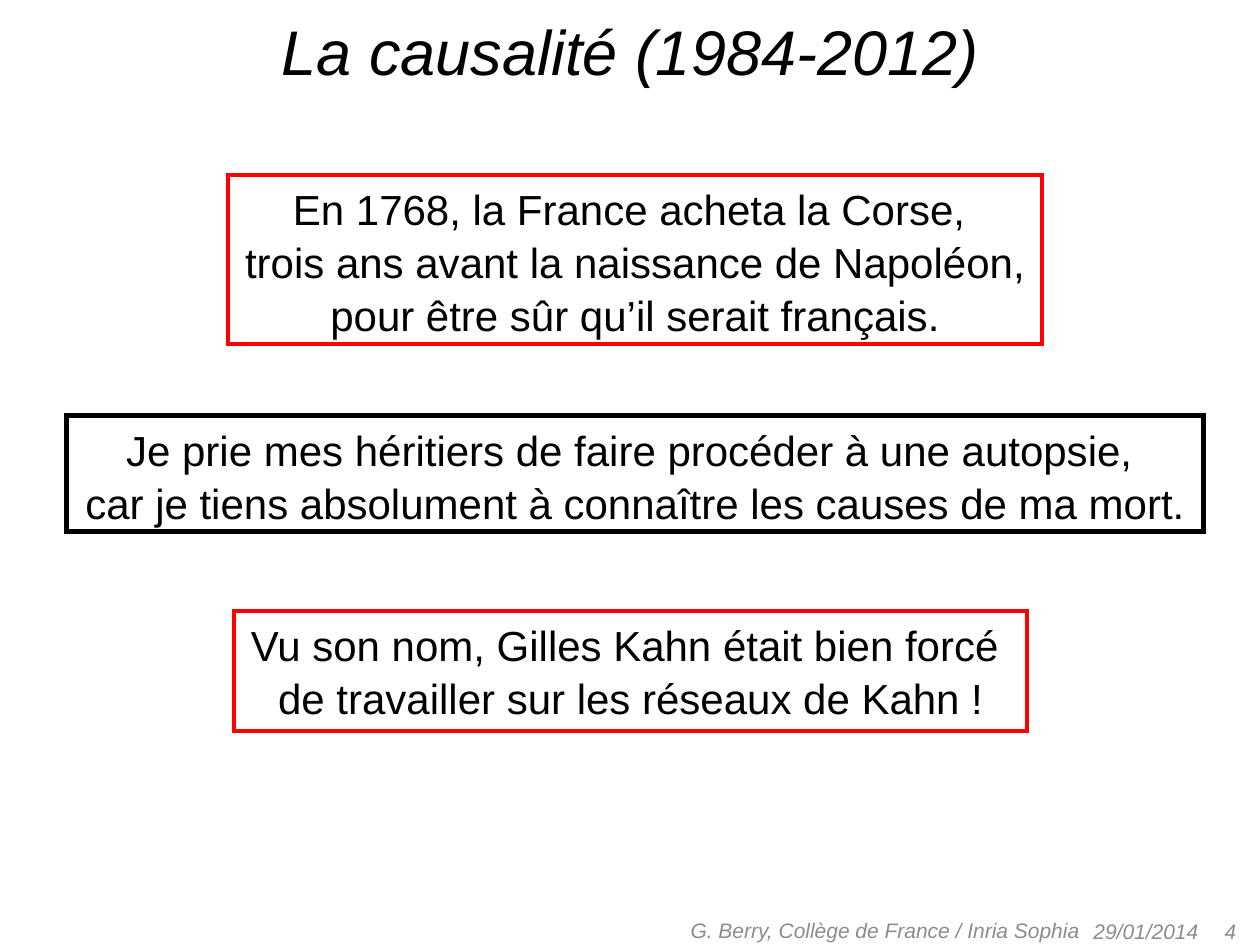
from dataclasses import dataclass

from lxml import etree
from pptx import Presentation
from pptx import util as u
from pptx.dml.color import RGBColor
from pptx.enum import shapes, text
from pptx.oxml import ns

COLORS = {"black": "000000", "red": "FF0000", "gray": "8C8C8C"}
FONT = "Arial"
COLUMNS, ROWS = 100, 75
WIDTH, HEIGHT = u.Inches(10), u.Inches(7.5)


@dataclass(frozen=True)
class Area:
    column: float
    row: float
    columns: float
    rows: float

    def bounds(self) -> tuple[int, int, int, int]:
        return (
            round(WIDTH * self.column / COLUMNS),
            round(HEIGHT * self.row / ROWS),
            round(WIDTH * self.columns / COLUMNS),
            round(HEIGHT * self.rows / ROWS),
        )


@dataclass(frozen=True)
class Quote:
    area: Area
    color: str
    line_width: float
    lines: tuple[str, ...]


@dataclass(frozen=True)
class FooterItem:
    area: Area
    wording: str
    alignment: text.PP_ALIGN


QUOTES = (
    Quote(Area(5.3, 33, 90.2, 9.2), "black", 3, (
        "Je prie mes héritiers de faire procéder à une autopsie, ",
        "car je tiens absolument à connaître les causes de ma mort.",
    )),
    Quote(Area(18.1, 13.9, 64.6, 13.4), "red", 2.25, (
        "En 1768, la France acheta la Corse, ",
        "trois ans avant la naissance de Napoléon,",
        "pour être sûr qu’il serait français.",
    )),
    Quote(Area(18.6, 48.5, 62.9, 9.5), "red", 2.25, (
        "Vu son nom, Gilles Kahn était bien forcé ",
        "de travailler sur les réseaux de Kahn !",
    )),
)

FOOTER = (
    FooterItem(Area(85.8, 71.9, 12, 4), "29/01/2014", text.PP_ALIGN.LEFT),
    FooterItem(Area(95, 71.9, 4.1, 4), "4", text.PP_ALIGN.RIGHT),
    FooterItem(Area(46.1, 71.8, 40.6, 4),
               "G. Berry, Collège de France / Inria Sophia", text.PP_ALIGN.RIGHT),
)


def format_paragraph(paragraph, size: float, color: str,
                     alignment: text.PP_ALIGN, italic: bool = False) -> None:
    paragraph.alignment = alignment
    font = paragraph.font
    font.name = FONT
    font.size = u.Pt(size)
    font.italic = italic
    font.color.rgb = RGBColor.from_string(COLORS[color])


def draw_title(slide, wording: str, area: Area) -> None:
    title = slide.shapes.title
    title.left, title.top, title.width, title.height = area.bounds()
    frame = title.text_frame
    frame.text = wording
    frame.auto_size = text.MSO_AUTO_SIZE.NONE
    frame.vertical_anchor = text.MSO_ANCHOR.BOTTOM
    format_paragraph(frame.paragraphs[0], 36, "black", text.PP_ALIGN.CENTER, True)


def draw_quote(slide, quote: Quote) -> None:
    shape = slide.shapes.add_shape(shapes.MSO_SHAPE.RECTANGLE, *quote.area.bounds())
    shape.shadow.inherit = False
    shape.fill.background()
    shape.line.color.rgb = RGBColor.from_string(COLORS[quote.color])
    shape.line.width = u.Pt(quote.line_width)
    outline = shape.element.spPr.find(ns.qn("a:ln"))
    etree.SubElement(outline, ns.qn("a:miter"), lim="800000")
    frame = shape.text_frame
    frame.word_wrap = False
    frame.vertical_anchor = text.MSO_ANCHOR.TOP
    frame.margin_bottom = u.Inches(0.01)
    for index, line in enumerate(quote.lines):
        paragraph = frame.add_paragraph() if index else frame.paragraphs[0]
        paragraph.text = line
        paragraph.line_spacing = 1.05
        format_paragraph(paragraph, 24, "black", text.PP_ALIGN.CENTER)


def draw_footer_item(slide, item: FooterItem) -> None:
    frame = slide.shapes.add_textbox(*item.area.bounds()).text_frame
    frame.word_wrap = True
    frame.vertical_anchor = text.MSO_ANCHOR.MIDDLE
    frame.text = item.wording
    format_paragraph(frame.paragraphs[0], 12, "gray", item.alignment, True)


def main() -> None:
    presentation = Presentation()
    presentation.slide_width, presentation.slide_height = WIDTH, HEIGHT
    slide = presentation.slides.add_slide(presentation.slide_layouts[5])
    for item in FOOTER:
        draw_footer_item(slide, item)
    draw_title(slide, "La causalité (1984-2012)", Area(2.5, 0.5, 95, 7))
    for quote in QUOTES:
        draw_quote(slide, quote)
    presentation.save("out.pptx")


if __name__ == "__main__":
    main()
